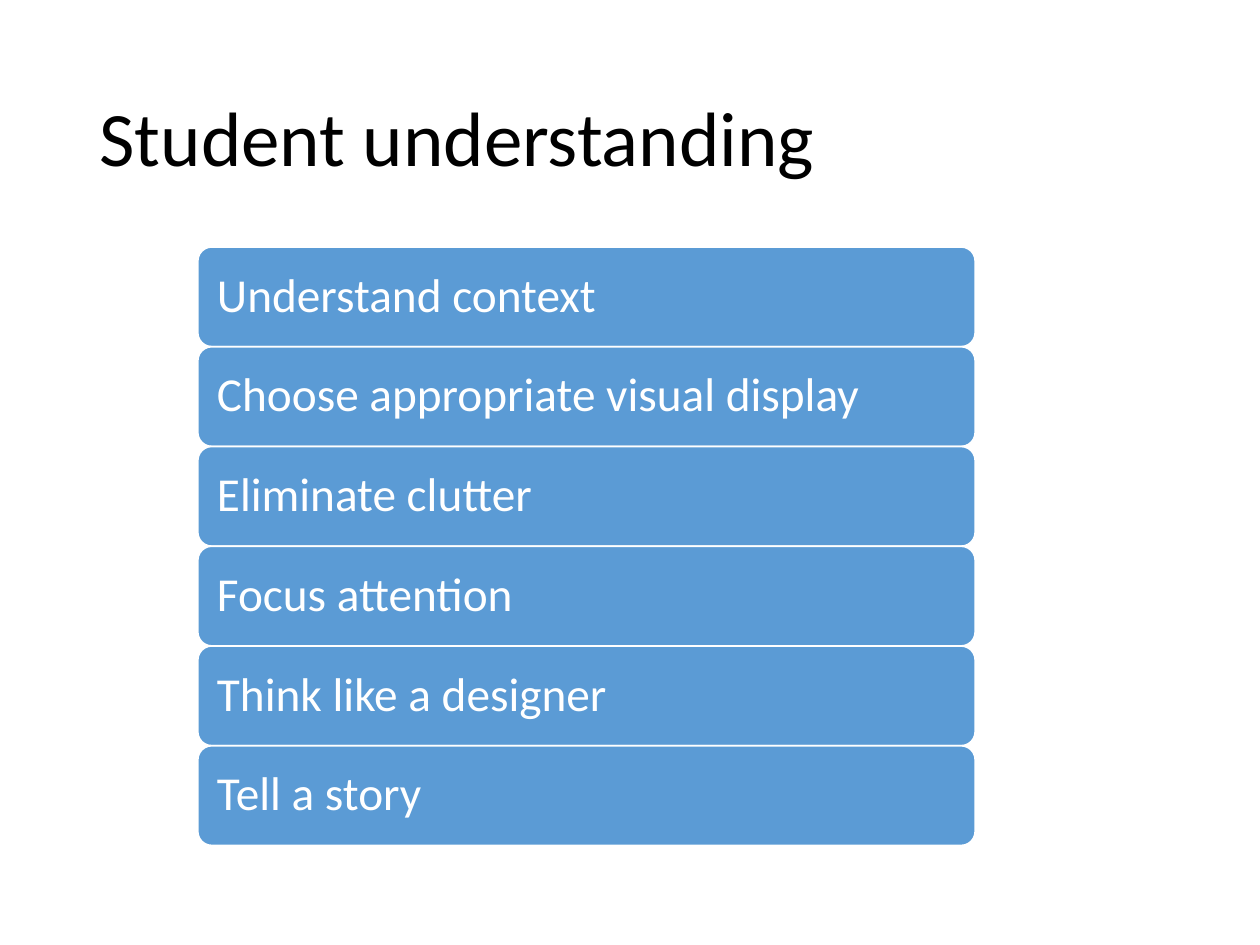
from dataclasses import dataclass

from pptx import Presentation
from pptx import util as u
from pptx.dml.color import RGBColor
from pptx.enum import shapes, text


@dataclass(frozen=True)
class Theme:
    font: str = "Calibri"
    title_size: float = 44
    bar_size: float = 27
    ink: RGBColor = RGBColor(0x00, 0x00, 0x00)
    paper: RGBColor = RGBColor(0xFF, 0xFF, 0xFF)
    bar: RGBColor = RGBColor(0x5B, 0x9B, 0xD5)


@dataclass(frozen=True)
class BarStack:
    """A single column of equal, touching rows, in inches."""
    left: float = 1.57
    top: float = 1.96
    width: float = 6.17
    bottom: float = 6.71
    corner: float = 0.14  # share of the bar height
    inset: float = 0.12


THEME = Theme()
STACK = BarStack()
TITLE = "Student understanding"
STEPS = (
    "Understand context",
    "Choose appropriate visual display",
    "Eliminate clutter",
    "Focus attention",
    "Think like a designer",
    "Tell a story",
)


def set_text(tf: text, words: str, size: float, color: RGBColor) -> None:
    """Fill a text frame with one left-aligned, vertically centred paragraph."""
    tf.text = words
    tf.word_wrap = True
    tf.vertical_anchor = text.MSO_ANCHOR.MIDDLE
    p = tf.paragraphs[0]
    p.alignment = text.PP_ALIGN.LEFT
    p.line_spacing = 0.9
    font = p.runs[0].font
    font.name, font.size = THEME.font, u.Pt(size)
    font.color.rgb = color


def add_title(s, words: str) -> None:
    sp = s.shapes.title
    sp.left, sp.top = u.Inches(0.69), u.Inches(0.4)
    sp.width, sp.height = u.Inches(8.62), u.Inches(1.45)
    set_text(sp.text_frame, words, THEME.title_size, THEME.ink)


def add_bar(s, row: int, rows: int, words: str) -> None:
    height = (STACK.bottom - STACK.top) / rows
    sp = s.shapes.add_shape(
        shapes.MSO_SHAPE.ROUNDED_RECTANGLE,
        u.Inches(STACK.left), u.Inches(STACK.top + row * height),
        u.Inches(STACK.width), u.Inches(height))
    sp.adjustments[0] = STACK.corner
    sp.shadow.inherit = False
    sp.fill.solid()
    sp.fill.fore_color.rgb = THEME.bar
    sp.line.color.rgb = THEME.paper
    sp.line.width = u.Pt(1)
    tf = sp.text_frame
    tf.margin_left = tf.margin_right = u.Inches(STACK.inset)
    tf.margin_top = tf.margin_bottom = u.Inches(STACK.inset)
    set_text(tf, words, THEME.bar_size, THEME.paper)


def main() -> None:
    prs = Presentation()
    prs.slide_width, prs.slide_height = u.Inches(10), u.Inches(7.5)
    s = prs.slides.add_slide(prs.slide_layouts.get_by_name("Title Only"))

    # Heading
    add_title(s, TITLE)

    # Stack of steps
    for row, words in enumerate(STEPS):
        add_bar(s, row, len(STEPS), words)

    prs.save("out.pptx")


if __name__ == "__main__":
    main()
